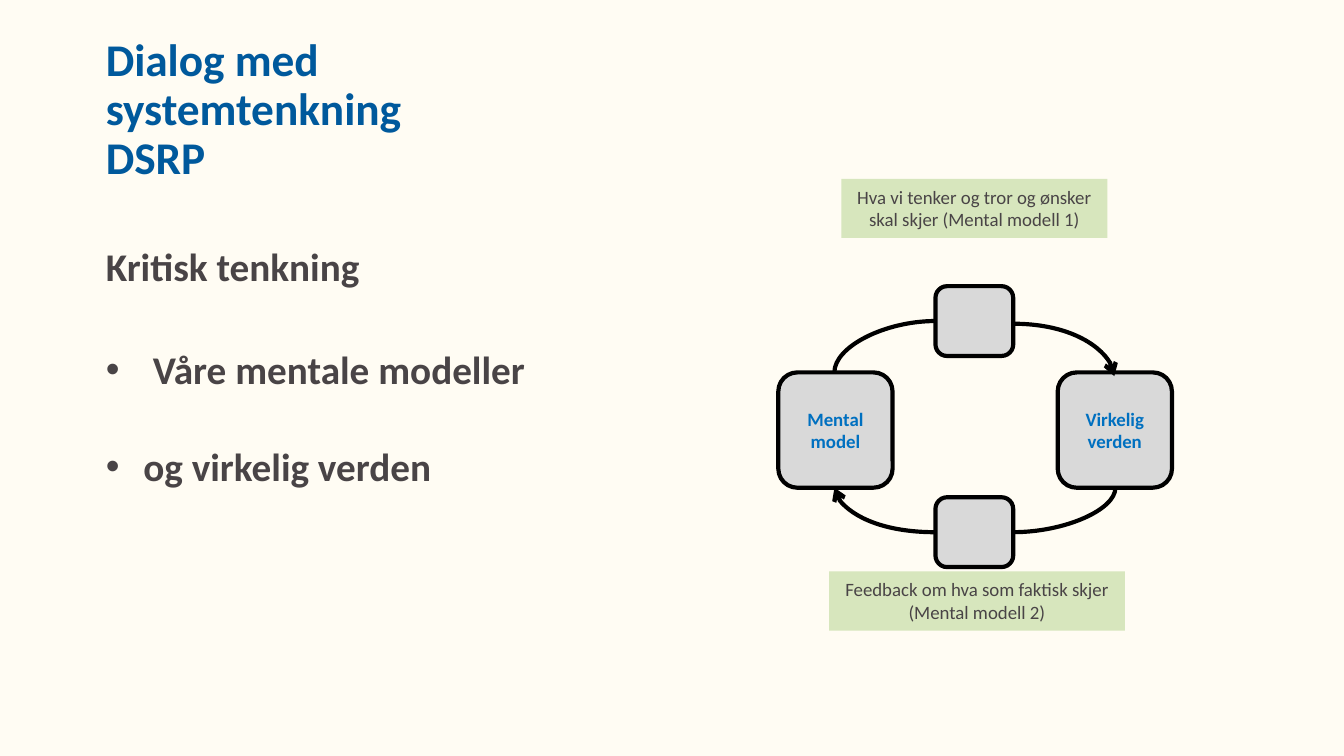
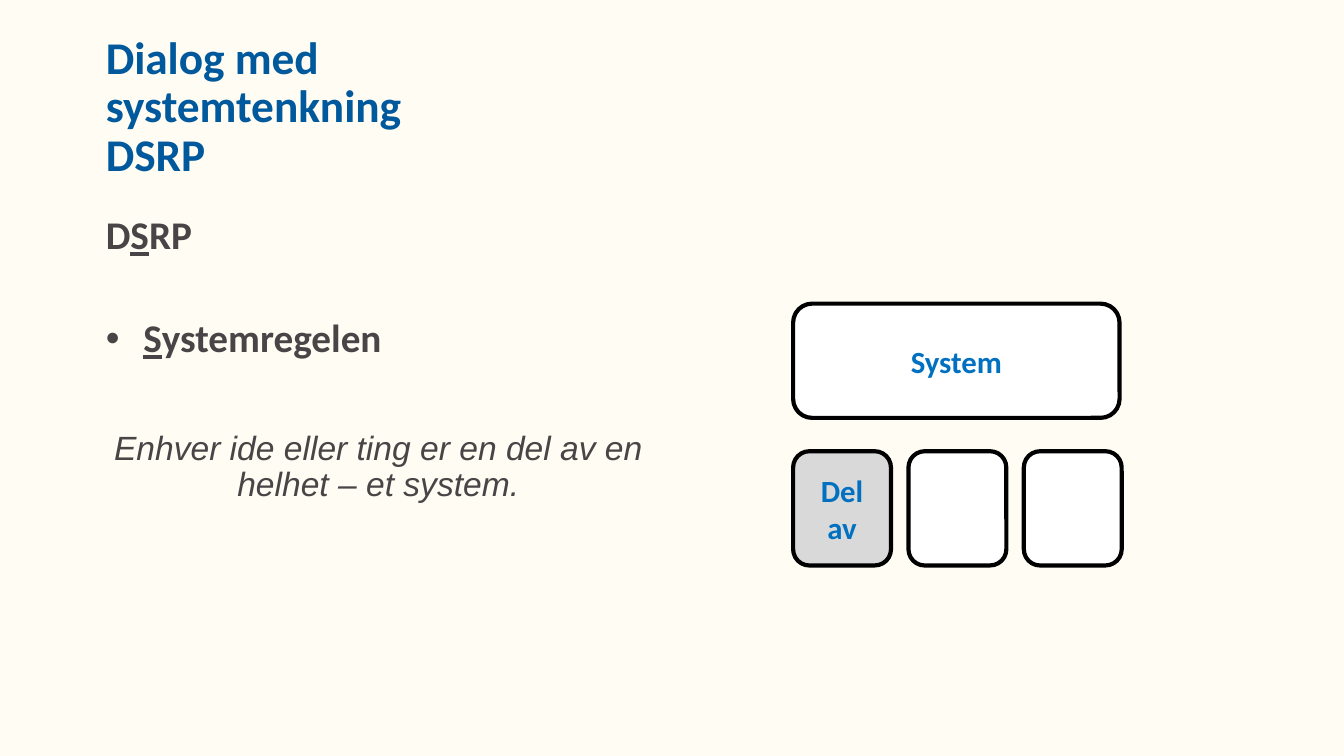
from dataclasses import dataclass
from math import cos, radians, sin

from lxml.etree import SubElement
from pptx import Presentation
from pptx.dml.color import RGBColor
from pptx.enum.shapes import MSO_CONNECTOR, MSO_SHAPE
from pptx.enum.text import MSO_ANCHOR, MSO_AUTO_SIZE, PP_ALIGN
from pptx.oxml.ns import qn
from pptx.slide import Slide
from pptx.util import Cm, Pt

CREAM, BLUE, SKY, DARK = "FFFCF3", "00599C", "0070C0", "494446"
GREEN, GREY, WHITE, BLACK = "D7E6BD", "D9D9D9", "FFFFFF", "000000"
EDGE = 2.25
LEFT = 1.75
TITLE = ("Dialog med", "systemtenkning", "DSRP")


@dataclass(frozen=True)
class Style:
    size: float
    color: str
    bold: bool = True
    slant: bool = False
    font: str = "Calibri"


HEAD = Style(24.3, BLUE)
BODY = Style(21, DARK)
QUOTE = Style(18, DARK, False, True, "Arial")
NOTE = Style(10.1, DARK, False)
SMALL = Style(10.1, SKY)
LARGE = Style(16.5, SKY)


@dataclass(frozen=True)
class Run:
    text: str
    under: bool = False


@dataclass(frozen=True)
class Item:
    runs: tuple[Run, ...]
    before: float = 0
    indent: float = 0
    style: Style = BODY
    center: bool = False


@dataclass(frozen=True)
class Box:
    left: float
    top: float
    width: float
    height: float
    fill: str = GREY
    lines: tuple[str, ...] = ()
    style: Style = SMALL


@dataclass(frozen=True)
class Arc:
    start: tuple[float, float]
    end: tuple[float, float]
    turn: int
    arrow: bool = False


def paint(code: str) -> RGBColor:
    return RGBColor.from_string(code)


def write(para, text: str, style: Style, under: bool = False) -> None:
    run = para.add_run()
    run.text = text
    font = run.font
    font.name = style.font
    font.size = Pt(style.size)
    font.bold = style.bold
    font.italic = style.slant
    font.underline = under
    font.color.rgb = paint(style.color)


def next_para(frame, index: int):
    return frame.add_paragraph() if index else frame.paragraphs[0]


def add_text(slide: Slide, top: float, width: float, height: float):
    frame = slide.shapes.add_textbox(Cm(LEFT), Cm(top), Cm(width), Cm(height)).text_frame
    frame.word_wrap = True
    return frame


def add_title(slide: Slide, top: float) -> None:
    frame = add_text(slide, top, 21.89, 2.77)
    frame.vertical_anchor = MSO_ANCHOR.MIDDLE
    frame.margin_bottom = Cm(1.04)
    para = frame.paragraphs[0]
    para.line_spacing = 0.9
    for index, line in enumerate(TITLE):
        if index:
            para.add_line_break()
        write(para, line, HEAD)


def add_body(slide: Slide, top: float, items: list[Item]) -> None:
    frame = add_text(slide, top, 10.8, 9.07)
    for index, item in enumerate(items):
        para = next_para(frame, index)
        para.line_spacing = 0.9
        para.space_before = Pt(item.before)
        para.alignment = PP_ALIGN.CENTER if item.center else PP_ALIGN.LEFT
        if item.indent:
            props = para._p.get_or_add_pPr()
            props.set("marL", str(Cm(item.indent)))
            props.set("indent", str(-Cm(item.indent)))
            SubElement(props, qn("a:buFont")).set("typeface", "Arial")
            SubElement(props, qn("a:buChar")).set("char", "•")
        for run in item.runs:
            write(para, run.text, item.style, run.under)


def add_box(slide: Slide, box: Box, kind=MSO_SHAPE.ROUNDED_RECTANGLE):
    shape = slide.shapes.add_shape(
        kind, Cm(box.left), Cm(box.top), Cm(box.width), Cm(box.height))
    shape.shadow.inherit = False
    shape.fill.solid()
    shape.fill.fore_color.rgb = paint(box.fill)
    shape.line.color.rgb = paint(BLACK)
    shape.line.width = Pt(EDGE)
    frame = shape.text_frame
    frame.word_wrap = True
    frame.vertical_anchor = MSO_ANCHOR.MIDDLE
    for index, line in enumerate(box.lines):
        para = next_para(frame, index)
        para.alignment = PP_ALIGN.CENTER
        write(para, line, box.style)
    return shape


def add_note(slide: Slide, box: Box) -> None:
    shape = add_box(slide, box, MSO_SHAPE.RECTANGLE)
    shape.line.fill.background()
    frame = shape.text_frame
    frame.word_wrap = False
    frame.vertical_anchor = MSO_ANCHOR.TOP
    frame.auto_size = MSO_AUTO_SIZE.SHAPE_TO_FIT_TEXT


def add_arc(slide: Slide, arc: Arc) -> None:
    (x1, y1), (x2, y2) = arc.start, arc.end
    mid_x, mid_y = (x1 + x2) / 2, (y1 + y2) / 2
    half_x, half_y = (x2 - x1) / 2, (y2 - y1) / 2
    angle = radians(arc.turn)
    dx = half_x * cos(angle) + half_y * sin(angle)
    dy = half_y * cos(angle) - half_x * sin(angle)
    curve = slide.shapes.add_connector(
        MSO_CONNECTOR.CURVE, Cm(mid_x - dx), Cm(mid_y - dy), Cm(mid_x + dx), Cm(mid_y + dy))
    curve.line.color.rgb = paint(BLACK)
    curve.line.width = Pt(EDGE)
    props = curve.element.spPr
    props.find(qn("a:xfrm")).set("rot", str(arc.turn * 60000))
    props.find(qn("a:prstGeom")).set("prst", "curvedConnector2")
    if arc.arrow:
        SubElement(props.find(qn("a:ln")), qn("a:tailEnd")).set("type", "arrow")
    SubElement(props, qn("a:effectLst"))


def add_slide(deck) -> Slide:
    slide = deck.slides.add_slide(deck.slide_layouts[6])
    back = slide.background.fill
    back.solid()
    back.fore_color.rgb = paint(CREAM)
    return slide


def draw_loop(deck) -> None:
    slide = add_slide(deck)
    add_note(slide, Box(15.67, 10.8, 5.59, 1.12, GREEN,
                        ("Feedback om hva som faktisk skjer", "(Mental modell 2)"), NOTE))
    add_note(slide, Box(15.9, 3.38, 5.03, 1.12, GREEN,
                        ("Hva vi tenker og tror og ønsker", "skal skjer (Mental modell 1)"), NOTE))
    add_body(slide, 4.55, [
        Item((Run("Kritisk tenkning"),)),
        Item((Run("Våre mentale modeller"),), 32.5, 0.89),
        Item((Run("og virkelig verden"),), 29.5, 0.71),
    ])
    for left, lines in ((14.71, ("Mental", "model")), (19.99, ("Virkelig", "verden"))):
        add_box(slide, Box(left, 7.04, 2.16, 2.18, lines=lines))
    for top in (5.41, 9.4):
        add_box(slide, Box(17.68, top, 1.47, 1.32))
    for arc in (
        Arc((15.77, 7.04), (17.68, 6.07), 90),
        Arc((19.15, 6.12), (21.06, 7.11), 0, True),
        Arc((21.08, 9.22), (19.15, 10.06), 90),
        Arc((17.68, 10.06), (15.77, 9.22), 180, True),
    ):
        add_arc(slide, arc)
    add_title(slide, 1.17)


def draw_parts(deck) -> None:
    slide = add_slide(deck)
    add_body(slide, 3.96, [
        Item((Run("D"), Run("S", True), Run("RP"))),
        Item((Run("S", True), Run("ystemregelen")), 32.5, 0.71),
        Item((Run("Enhver ide eller ting er en del av en helhet – et system."),),
             37.5, style=QUOTE, center=True),
    ])
    left, high = 14.99, 2.16
    add_box(slide, Box(left, 5.74, 6.17, high, WHITE, ("System",), LARGE))
    for index, lines in enumerate((("Del av",), (), ())):
        fill = GREY if lines else WHITE
        add_box(slide, Box(left + index * 2.18, 8.53, 1.85, high, fill, lines, LARGE))
    add_title(slide, 1.12)


def main() -> None:
    deck = Presentation()
    deck.slide_width, deck.slide_height = Cm(25.4), Cm(14.29)
    draw_loop(deck)
    draw_parts(deck)
    deck.save("out.pptx")


if __name__ == "__main__":
    main()
